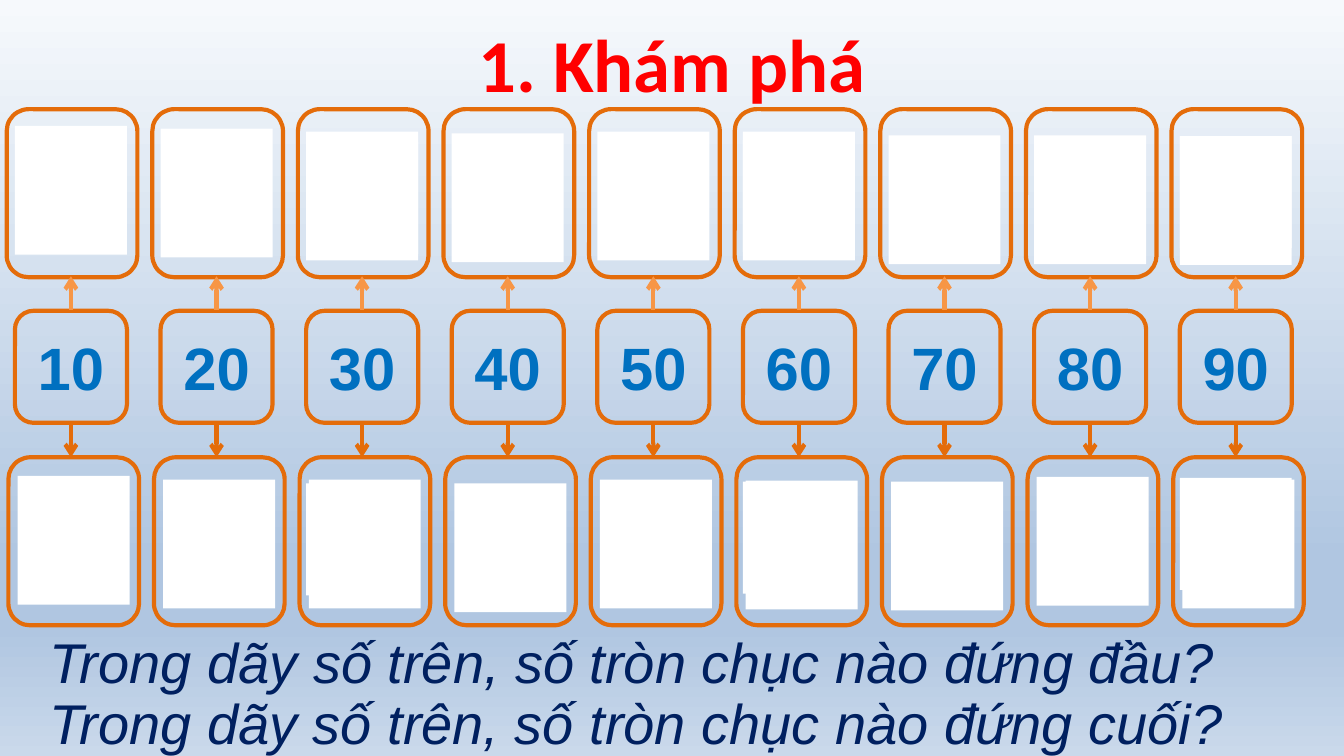
from lxml import etree
from pptx import Presentation
from pptx.dml.color import RGBColor
from pptx.enum.shapes import MSO_CONNECTOR, MSO_SHAPE
from pptx.enum.text import MSO_ANCHOR, PP_ALIGN
from pptx.oxml.ns import qn
from pptx.util import Pt

ROUNDED, RECTANGLE = MSO_SHAPE.ROUNDED_RECTANGLE, MSO_SHAPE.RECTANGLE
STRAIGHT = MSO_CONNECTOR.STRAIGHT
MIDDLE = MSO_ANCHOR.MIDDLE
CENTER, JUSTIFY = PP_ALIGN.CENTER, PP_ALIGN.JUSTIFY

HEADING = "1. Khám phá"
FIRST_QUESTION = "Trong dãy số trên, số tròn chục nào đứng đầu?"
LAST_QUESTION = "Trong dãy số trên, số tròn chục nào đứng cuối?"
TENS = [10, 20, 30, 40, 50, 60, 70, 80, 90]

THEME = {
    "sky": [(0, "F6F9FC"), (74, "B0C6E1"), (83, "B0C6E1"), (100, "CAD9EB")],
    "border": "E46C0A",
    "up_arrow": "F79646",
    "card": "FFFFFF",
    "line": 2.25,
    "heading": dict(font="Calibri", size=40, color="FF0000", bold=True),
    "number": dict(font="Arial", size=32, color="0070C0", bold=True),
    "question": dict(font="Arial", size=30, color="002060", italic=True, align=JUSTIFY),
}

PITCH = 78
FRAME_SIZE = (70, 90)
NUMBER_SIZE = (60, 60)
CARD_SIZE = (60, 69)
NUMBER_LEFT, NUMBER_TOP = 8, 166.5
ARROW_X = 38
UP_ARROW = (166, 148)
DOWN_ARROW = (226.8, 245)
QUESTION_BOX = (19.5, 320.5, 678, 67.5)
QUESTION_STEP = 32.5
FRAME_ROWS = [
    dict(left=3.6, top=58.5, card_left=8,
         card_tops=[67.5, 69, 70.5, 71.5, 70.5, 70.5, 72.5, 72.5, 73],
         patch_tops={2: 76, 5: 75, 8: 73}),
    dict(left=4.5, top=245, card_left=9.4,
         card_tops=[255, 257, 257, 259, 257, 257.5, 258, 255.5, 257],
         patch_tops={2: 259, 5: 258, 8: 256}),
]


def rgb(code):
    return RGBColor.from_string(code)


def write(holder, text, font, size, color, bold=False, italic=False, align=CENTER):
    frame = holder.text_frame
    frame.word_wrap = True
    frame.vertical_anchor = MIDDLE
    paragraph = frame.paragraphs[0]
    paragraph.alignment = align
    run = paragraph.add_run()
    run.text = text
    run.font.name = font
    run.font.size = Pt(size)
    run.font.bold = bold
    run.font.italic = italic
    run.font.color.rgb = rgb(color)


def add_box(slide, kind, left, top, size, fill=None, border=None):
    box = slide.shapes.add_shape(kind, Pt(left), Pt(top), *map(Pt, size))
    box.shadow.inherit = False
    if fill:
        box.fill.solid()
        box.fill.fore_color.rgb = rgb(fill)
    else:
        box.fill.background()
    if border:
        box.line.color.rgb = rgb(border)
        box.line.width = Pt(THEME["line"])
    else:
        box.line.fill.background()
    return box


def add_arrow(slide, x, start, end, color):
    arrow = slide.shapes.add_connector(STRAIGHT, Pt(x), Pt(start), Pt(x), Pt(end))
    arrow.line.color.rgb = rgb(color)
    arrow.line.width = Pt(THEME["line"])
    properties = arrow._element.spPr
    etree.SubElement(properties.find(qn("a:ln")), qn("a:tailEnd"), type="arrow")
    etree.SubElement(properties, qn("a:effectLst"))


def paint_sky(slide):
    fill = slide.background.fill
    fill.gradient()
    fill.gradient_angle = 270
    stops = next(slide._element.iter(qn("a:gsLst")))
    for stop in list(stops):
        stops.remove(stop)
    for percent, color in THEME["sky"]:
        stop = etree.SubElement(stops, qn("a:gs"), pos=str(percent * 1000))
        etree.SubElement(stop, qn("a:srgbClr"), val=color)


def add_text(slide, text, box, style):
    write(slide.shapes.add_textbox(*map(Pt, box)), text, **style)


def main():
    deck = Presentation()
    deck.slide_width, deck.slide_height = Pt(720), Pt(405)
    slide = deck.slides.add_slide(deck.slide_layouts[5])
    paint_sky(slide)

    left, top, width, height = QUESTION_BOX
    question = slide.shapes.title
    question.left, question.top = Pt(left), Pt(top)
    question.width, question.height = Pt(width), Pt(height)
    write(question, FIRST_QUESTION, **THEME["question"])
    add_text(slide, LAST_QUESTION, (left, top + QUESTION_STEP, width, height), THEME["question"])
    add_text(slide, HEADING, (36, 0, 648, 67.5), THEME["heading"])

    for column, ten in enumerate(TENS):
        shift = column * PITCH
        number = add_box(slide, ROUNDED, NUMBER_LEFT + shift, NUMBER_TOP, NUMBER_SIZE,
                         border=THEME["border"])
        write(number, str(ten), **THEME["number"])
        for row in FRAME_ROWS:
            add_box(slide, ROUNDED, row["left"] + shift, row["top"], FRAME_SIZE,
                    border=THEME["border"])
        add_arrow(slide, ARROW_X + shift, *UP_ARROW, THEME["up_arrow"])
        add_arrow(slide, ARROW_X + shift, *DOWN_ARROW, THEME["border"])
        for row in FRAME_ROWS:
            if column in row["patch_tops"]:
                add_box(slide, RECTANGLE, NUMBER_LEFT + shift, row["patch_tops"][column],
                        NUMBER_SIZE, fill=THEME["card"])
            add_box(slide, RECTANGLE, row["card_left"] + shift, row["card_tops"][column],
                    CARD_SIZE, fill=THEME["card"])

    deck.save("out.pptx")


if __name__ == "__main__":
    main()
